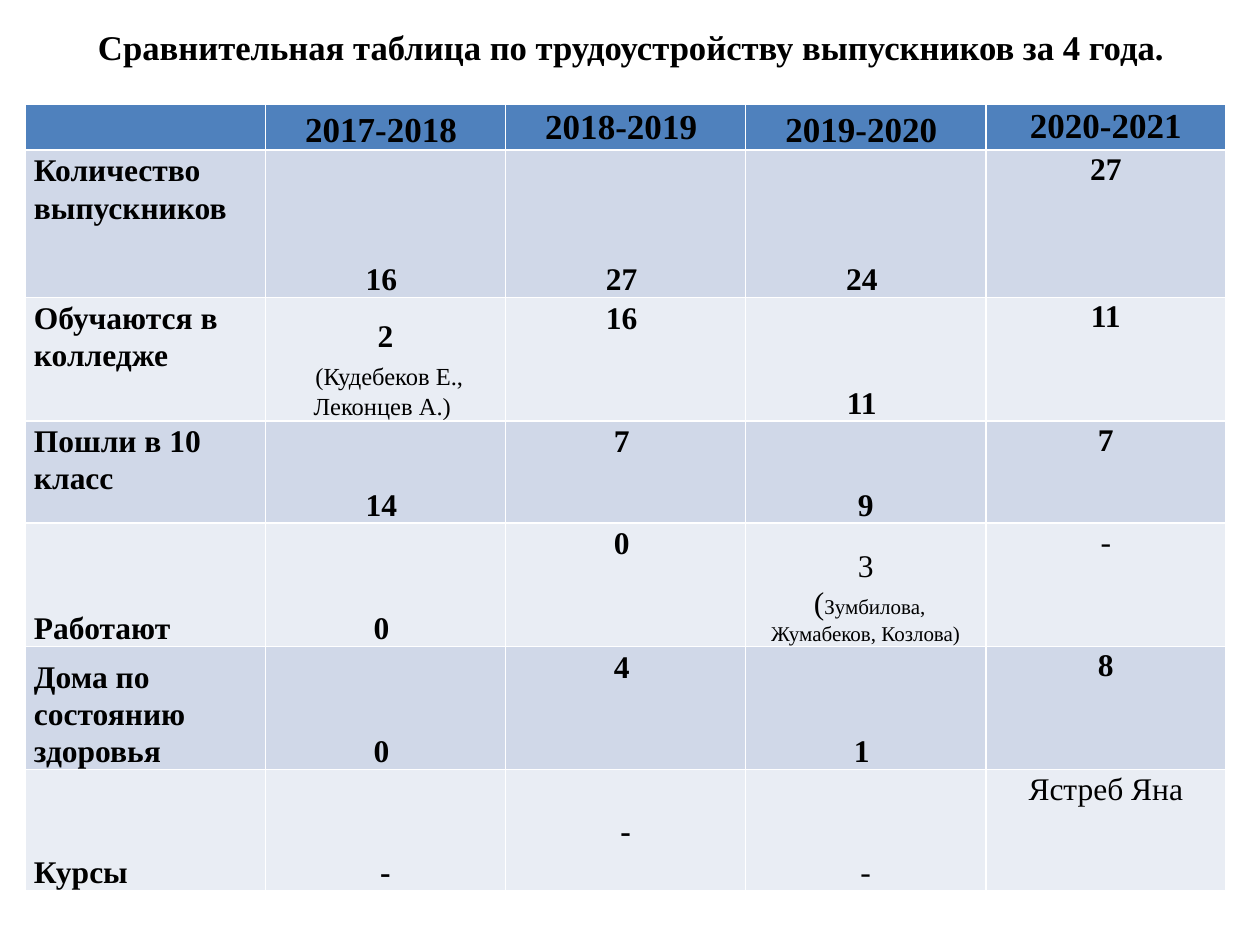
from pptx import Presentation
from pptx.dml.color import RGBColor
from pptx.enum.text import MSO_ANCHOR as Anchor, PP_ALIGN as Align
from pptx.util import Inches, Pt

BLACK = RGBColor(0x00, 0x00, 0x00)
BLUE = RGBColor(0x4F, 0x81, 0xBD)
DARK = RGBColor(0xD0, 0xD8, 0xE8)
LIGHT = RGBColor(0xE9, 0xED, 0xF4)
FONT = "Times New Roman"

TITLE = "Сравнительная таблица по трудоустройству выпускников за 4 года."
HEIGHTS = [0.36, 1.17, 0.98, 0.81, 0.98, 0.98, 0.96]
ROWS = [
    ["", "2017-2018 ", "2018-2019 ", "2019-2020 ", "2020-2021"],
    ["Количество выпускников", "16 ", "27 ", "24 ", "27"],
    ["Обучаются в колледже",
     [["2"], [" ", ("(Кудебеков Е., Леконцев А.) ", 14)]],
     "16 ", "11 ", "11"],
    ["Пошли в 10 класс", "14 ", "7 ", "9", "7"],
    ["Работают", "0 ", "0 ",
     [[("3", 18)], [(" (", 18), ("Зумбилова, Жумабеков, Козлова)", 12)]],
     [[("-", 18)]]],
    ["Дома по состоянию здоровья", "0 ", "4 ", "1 ", "8"],
    ["Курсы", "-", "-", [[("-", 18)]], [[("Ястреб Яна", 18)]]],
]
COLS = len(ROWS[0])
ANCHORS = {(1, 2): Anchor.BOTTOM, (6, 2): Anchor.MIDDLE}


def write(para, text, size=18, bold=True, align=Align.CENTER, space=None):
    para.alignment = align
    para.line_spacing = space
    run = para.add_run()
    run.text = text
    font = run.font
    font.name, font.size, font.bold = FONT, Pt(size), bold
    font.color.rgb = BLACK


def anchor(row, col):
    low = col in (1, 3) or (col == 0 and row >= 4)
    return ANCHORS.get((row, col), Anchor.BOTTOM if low else Anchor.TOP)


def fill_cell(cell, row, col, data):
    cell.fill.solid()
    cell.fill.fore_color.rgb = BLUE if row == 0 else DARK if row % 2 else LIGHT
    cell.vertical_anchor = anchor(row, col)
    last = col == COLS - 1
    cell.margin_left = cell.margin_right = Inches(0 if last else 0.07)
    cell.margin_top = Inches(0 if last else 0.01)
    cell.margin_bottom = 0
    if not data:
        return
    frame = cell.text_frame
    lines = [[data]] if isinstance(data, str) else data
    for num, line in enumerate(lines):
        para = frame.add_paragraph() if num else frame.paragraphs[0]
        for part in line:
            bold = isinstance(part, str)
            text, size = (part, 18 if row else 20) if bold else part
            write(para, text, size=size, bold=bold, space=1.07,
                  align=Align.CENTER if col else Align.LEFT)


def add_title(slide, left, top, width, height):
    title = slide.shapes.title
    title.left, title.top, title.width, title.height = left, top, width, height
    frame = title.text_frame
    frame.word_wrap = True
    frame.vertical_anchor = Anchor.MIDDLE
    write(frame.paragraphs[0], TITLE, size=19.8)


def add_grid(slide, left, top, width, height):
    table = slide.shapes.add_table(
        len(ROWS), COLS, left, top, width, height).table
    for col in table.columns:
        col.width = width // COLS
    for row, tall in zip(table.rows, HEIGHTS):
        row.height = Inches(tall)
    for row, items in enumerate(ROWS):
        for col, data in enumerate(items):
            fill_cell(table.cell(row, col), row, col, data)


def main():
    deck = Presentation()
    deck.slide_width, deck.slide_height = Inches(10), Inches(7.5)
    slide = deck.slides.add_slide(deck.slide_layouts[5])
    add_title(slide, Inches(0.24), Inches(0.05), Inches(9.53), Inches(0.64))
    add_grid(slide, Inches(0.2), Inches(0.83), Inches(9.53),
             Inches(sum(HEIGHTS)))
    deck.save("out.pptx")


if __name__ == "__main__":
    main()
